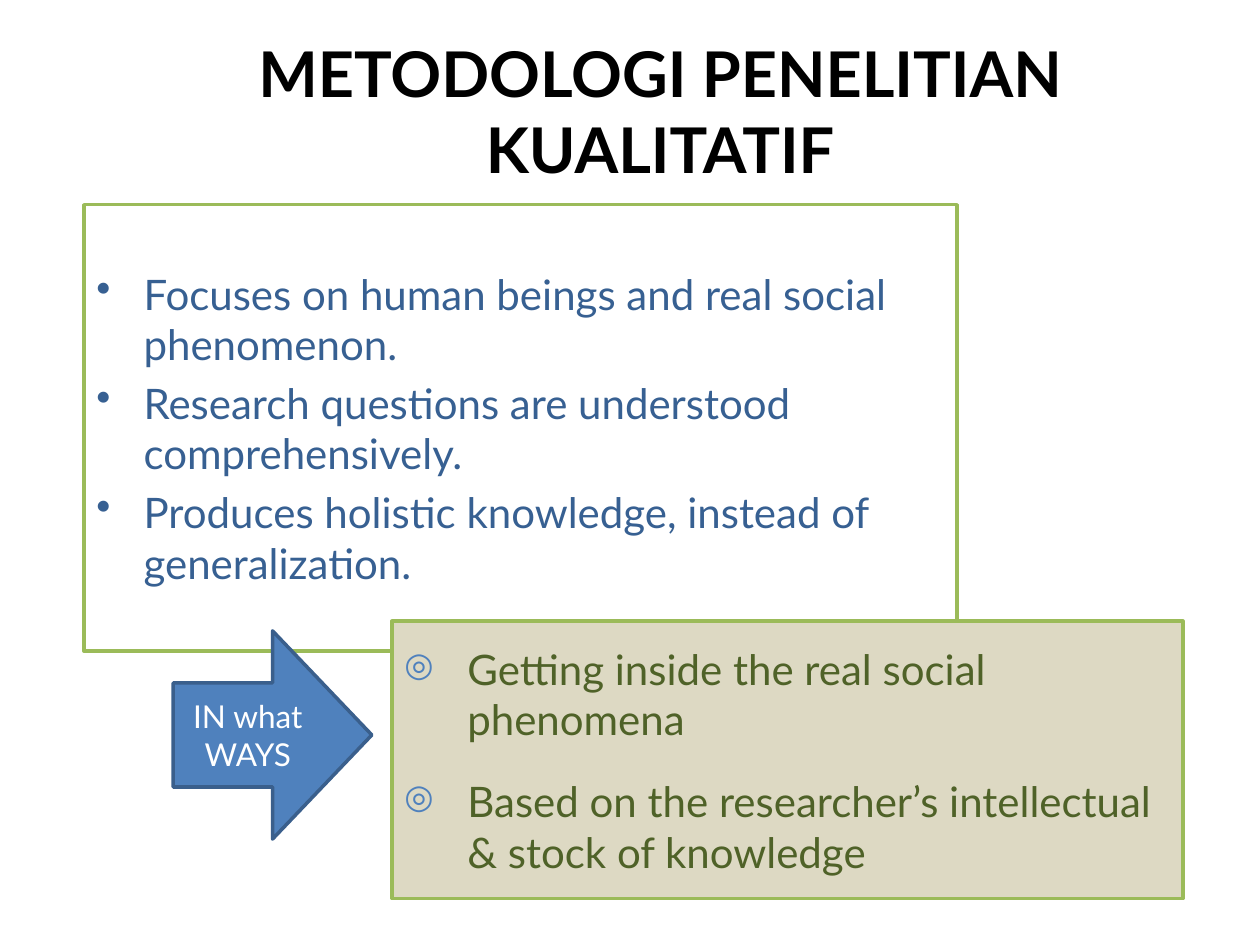
from lxml import etree
from pptx import Presentation
from pptx import util as u
from pptx.dml.color import RGBColor
from pptx.enum import shapes, text
from pptx.oxml import ns

BLACK = RGBColor(0x00, 0x00, 0x00)
WHITE = RGBColor(0xFF, 0xFF, 0xFF)
BLUE = RGBColor(0x4F, 0x81, 0xBD)
BLUE_EDGE = RGBColor(0x3A, 0x5F, 0x8C)
BLUE_TEXT = RGBColor(0x37, 0x60, 0x92)
GREEN = RGBColor(0x9B, 0xBB, 0x59)
GREEN_TEXT = RGBColor(0x4F, 0x62, 0x28)
TAN = RGBColor(0xDD, 0xD9, 0xC3)


class SlideBuilder:
    """Holds the style and the current slide; lengths are in points."""

    font_name = "Lato"
    line_width = 2

    def __init__(self, slide):
        self.slide = slide

    def style(self, paragraph, size, color, bold=False):
        font = paragraph.font
        font.name, font.size, font.bold = self.font_name, u.Pt(size), bold
        font.color.rgb = color

    def title(self, words, box, size):
        shape = self.slide.shapes.add_textbox(*map(u.Pt, box))
        frame = shape.text_frame
        frame.word_wrap = True
        frame.vertical_anchor = text.MSO_ANCHOR.MIDDLE
        paragraph = frame.paragraphs[0]
        paragraph.text = words
        paragraph.alignment = text.PP_ALIGN.CENTER
        self.style(paragraph, size, BLACK, bold=True)

    def shape(self, kind, box, fill, line):
        shape = self.slide.shapes.add_shape(kind, *map(u.Pt, box))
        shape.shadow.inherit = False
        shape.fill.solid()
        shape.fill.fore_color.rgb = fill
        shape.line.color.rgb = line
        shape.line.width = u.Pt(self.line_width)
        shape.text_frame.word_wrap = True
        shape.text_frame.vertical_anchor = text.MSO_ANCHOR.MIDDLE
        return shape

    def arrow(self, words, box, size):
        shape = self.shape(shapes.MSO_SHAPE.RIGHT_ARROW, box, BLUE, BLUE_EDGE)
        paragraph = shape.text_frame.paragraphs[0]
        paragraph.text = words
        paragraph.alignment = text.PP_ALIGN.CENTER
        self.style(paragraph, size, WHITE)

    def bullet(self, paragraph, mark, indent, color, percent):
        properties = paragraph._p.get_or_add_pPr()
        properties.set("marL", str(u.Pt(indent)))
        properties.set("indent", str(u.Pt(-indent)))
        bullet_color = etree.SubElement(properties, ns.qn("a:buClr"))
        etree.SubElement(bullet_color, ns.qn("a:srgbClr"), val=str(color))
        etree.SubElement(properties, ns.qn("a:buSzPct"), val=str(percent * 1000))
        etree.SubElement(properties, ns.qn("a:buChar"), char=mark)

    def bullet_box(self, items, box, fill, color, mark, indent, gap,
                   mark_color, mark_percent=100):
        shape = self.shape(shapes.MSO_SHAPE.RECTANGLE, box, fill, GREEN)
        frame = shape.text_frame
        for index, item in enumerate(items):
            paragraph = frame.add_paragraph() if index else frame.paragraphs[0]
            paragraph.text = item
            paragraph.alignment = text.PP_ALIGN.LEFT
            self.bullet(paragraph, mark, indent, mark_color, mark_percent)
            paragraph.space_before = u.Pt(gap)
            self.style(paragraph, 24, color)


def main():
    presentation = Presentation()
    presentation.slide_width, presentation.slide_height = u.Pt(720), u.Pt(540)
    builder = SlideBuilder(
        presentation.slides.add_slide(presentation.slide_layouts[6]))

    # Title
    builder.title("METODOLOGI PENELITIAN KUALITATIF", (70.5, 18, 613.5, 90), 36)

    # What qualitative research is
    builder.bullet_box(
        ["Focuses on human beings and real social phenomenon.",
         "Research questions are understood comprehensively.",
         "Produces holistic knowledge, instead of generalization."],
        (48, 117, 499, 255), WHITE, BLUE_TEXT,
        mark="•", indent=27, gap=4.8, mark_color=BLUE_TEXT)

    # How it is done
    builder.bullet_box(
        ["Getting inside the real social phenomena",
         "Based on the researcher’s intellectual & stock of knowledge"],
        (224, 355, 452, 158.5), TAN, GREEN_TEXT,
        mark="◎", indent=36, gap=18, mark_color=BLUE, mark_percent=80)

    # Arrow towards the ways
    builder.arrow("IN what WAYS", (99, 360.5, 113.5, 119), 18)

    presentation.save("out.pptx")


if __name__ == "__main__":
    main()
